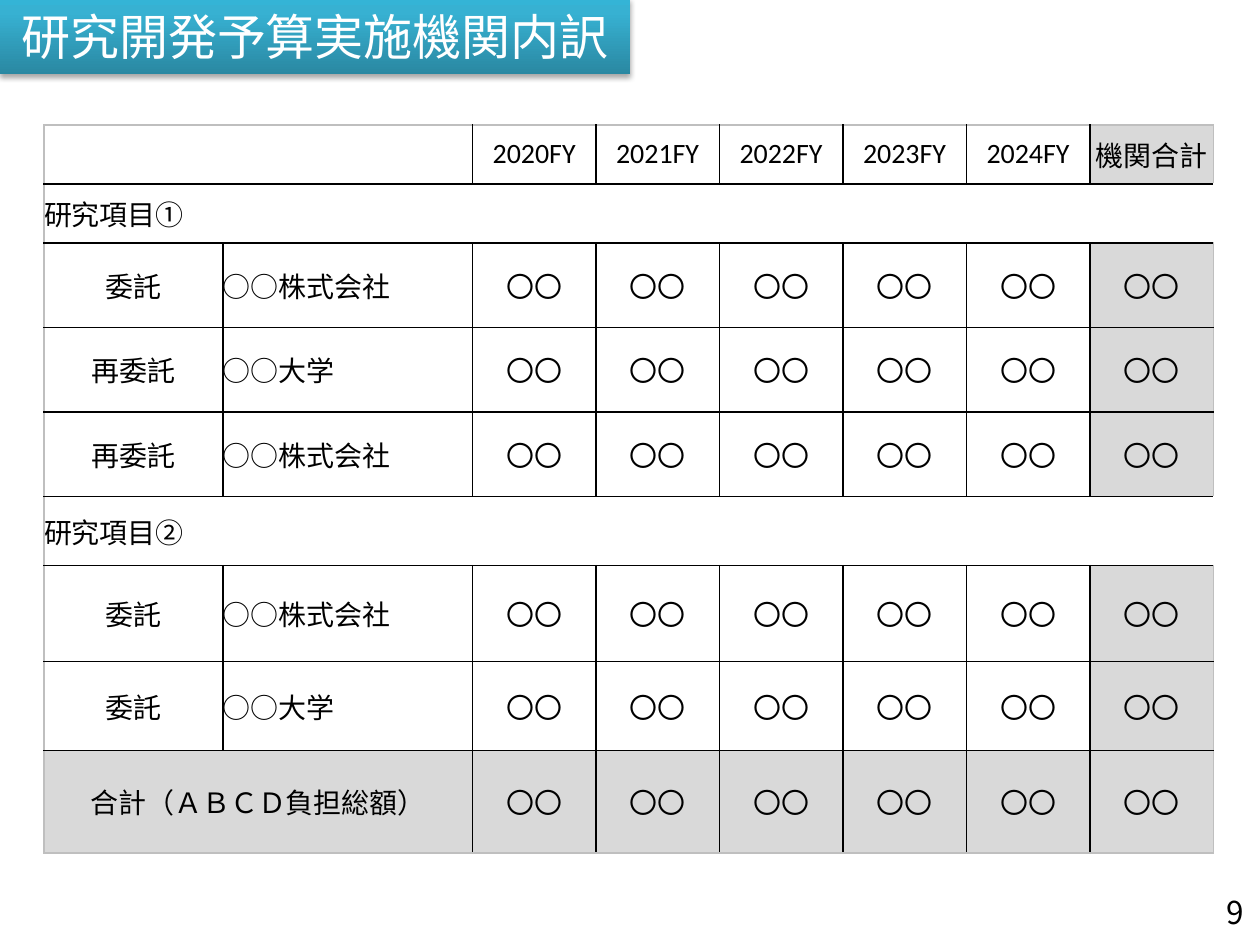
"""Builds the slide that breaks the research budget down by institution."""
from lxml.etree import SubElement
from pptx import Presentation
from pptx.dml.color import RGBColor
from pptx.enum.shapes import MSO_SHAPE as Shape
from pptx.enum.text import MSO_ANCHOR as Anchor, PP_ALIGN as Align
from pptx.oxml import parse_xml
from pptx.oxml.ns import nsdecls, qn
from pptx.util import Inches, Pt

COLORS = {"text": "000000", "title": "FFFFFF", "total": "D9D9D9", "frame": "BFBFBF",
          "dark": "2A88A2", "mid": "37B1D2", "light": "34B4D6"}
LATIN, JAPANESE = "Calibri", "Noto Sans CJK JP"

TITLE = "研究開発予算実施機関内訳"
PAGE_NUMBER = "9"
YEARS = [f"{year}FY" for year in range(2020, 2025)]
AMOUNTS = ["〇〇"] * (len(YEARS) + 1)
ROWS = [
    (0.47, ["", None, *YEARS, "機関合計"]),
    (0.47, ["研究項目①"] + [None] * 7),
    (0.67, ["委託", "○○株式会社", *AMOUNTS]),
    (0.67, ["再委託", "○○大学", *AMOUNTS]),
    (0.67, ["再委託", "○○株式会社", *AMOUNTS]),
    (0.55, ["研究項目②"] + [None] * 7),
    (0.76, ["委託", "○○株式会社", *AMOUNTS]),
    (0.71, ["委託", "○○大学", *AMOUNTS]),
    (0.81, ["合計（ＡＢＣＤ負担総額）", None, *AMOUNTS]),
]
COLUMN_WIDTHS = [1.42, 1.98] + [0.98] * 6
LAST_ROW, LAST_COLUMN = len(ROWS) - 1, len(COLUMN_WIDTHS) - 1


def write(frame, words, size, color, align, font=JAPANESE):
    """Puts one run of text into a text frame."""
    paragraph = frame.paragraphs[0]
    paragraph.alignment = align
    run = paragraph.add_run()
    run.text = words
    run.font.size = Pt(size)
    run.font.name = font
    run.font.color.rgb = RGBColor.from_string(COLORS[color])
    SubElement(run.font._element, qn("a:ea")).set("typeface", JAPANESE)


def add_title(slide):
    """Adds the shaded title band."""
    band = slide.shapes.add_shape(Shape.RECTANGLE, 0, Inches(-0.02), Inches(5), Inches(0.61))
    band.line.fill.background()
    stops = "".join(f'<a:gs pos="{pos}"><a:srgbClr val="{COLORS[name]}"/></a:gs>'
                    for pos, name in ((0, "dark"), (80000, "mid"), (100000, "light")))
    properties = band._element.spPr
    properties.find(qn("a:prstGeom")).addnext(parse_xml(
        f'<a:gradFill {nsdecls("a")} rotWithShape="1"><a:gsLst>{stops}</a:gsLst>'
        '<a:lin ang="16200000" scaled="0"/></a:gradFill>'))
    properties.append(parse_xml(
        f'<a:effectLst {nsdecls("a")}><a:outerShdw blurRad="{Pt(3.1)}" dist="{Pt(1.8)}" '
        'dir="5400000" rotWithShape="0"><a:srgbClr val="000000"><a:alpha val="35000"/>'
        '</a:srgbClr></a:outerShdw></a:effectLst>'))
    band.text_frame.vertical_anchor = Anchor.MIDDLE
    band.text_frame.word_wrap = True
    write(band.text_frame, TITLE, 28, "title", Align.CENTER, LATIN)


def add_page_number(slide):
    """Adds the page number at the lower right."""
    frame = slide.shapes.add_textbox(
        Inches(9.29), Inches(7.11), Inches(0.58), Inches(0.25)).text_frame
    frame.margin_left = frame.margin_right = frame.margin_top = frame.margin_bottom = 0
    frame.vertical_anchor = Anchor.MIDDLE
    frame.word_wrap = False
    write(frame, PAGE_NUMBER, 18, "text", Align.RIGHT)


def draw_borders(cell, row, column):
    """Draws a grey outer frame and black inner rules around a cell."""
    labels = ROWS[row][1]
    edges = [("L", column == 0, labels[column] is None),
             ("R", column == LAST_COLUMN,
              column < LAST_COLUMN and labels[column + 1] is None),
             ("T", row == 0, False),
             ("B", row == LAST_ROW, False)]
    for side, outer, merged in edges:
        if not merged:
            color = COLORS["frame" if outer else "text"]
            cell._tc.get_or_add_tcPr().append(parse_xml(
                f'<a:ln{side} {nsdecls("a")} w="{Pt(1)}"><a:solidFill>'
                f'<a:srgbClr val="{color}"/></a:solidFill></a:ln{side}>'))


def add_budget(slide):
    """Adds the budget table."""
    budget = slide.shapes.add_table(
        len(ROWS), len(COLUMN_WIDTHS), Inches(0.35), Inches(0.99),
        Inches(sum(COLUMN_WIDTHS)), Inches(sum(height for height, _ in ROWS))).table
    budget.first_row = budget.horz_banding = False
    for column, width in enumerate(COLUMN_WIDTHS):
        budget.columns[column].width = Inches(width)
    for row, (height, labels) in enumerate(ROWS):
        budget.rows[row].height = Inches(height)
        span = 1 + labels.count(None)
        if span > 1:
            budget.cell(row, 0).merge(budget.cell(row, span - 1))
        section = span == len(labels)
        for column, label in enumerate(labels):
            cell = budget.cell(row, column)
            cell.margin_left = cell.margin_right = cell.margin_top = cell.margin_bottom = 0
            cell.vertical_anchor = Anchor.MIDDLE
            draw_borders(cell, row, column)
            if row == LAST_ROW or (column == LAST_COLUMN and not section):
                cell.fill.solid()
                cell.fill.fore_color.rgb = RGBColor.from_string(COLORS["total"])
            else:
                cell.fill.background()
            if label:
                left = section or (column == 1 and span == 1)
                write(cell.text_frame, label, 16, "text", Align.LEFT if left else Align.CENTER,
                      LATIN if label in YEARS else JAPANESE)


def main():
    """Builds and saves the slide."""
    deck = Presentation()
    deck.slide_width, deck.slide_height = Inches(10), Inches(7.5)
    slide = deck.slides.add_slide(deck.slide_layouts[6])
    add_title(slide)
    add_page_number(slide)
    add_budget(slide)
    deck.save("out.pptx")


if __name__ == "__main__":
    main()
